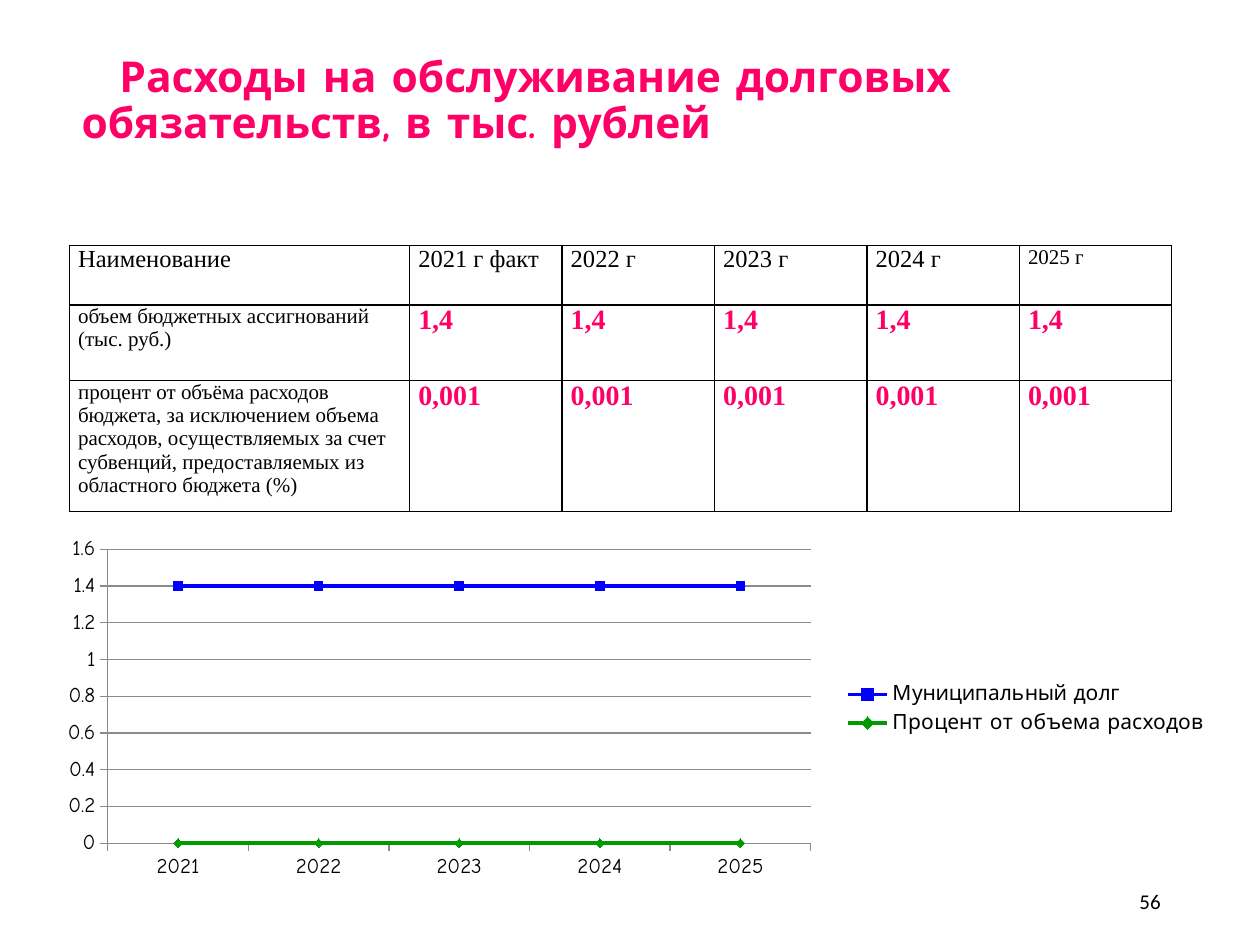
from dataclasses import dataclass

from lxml import etree
from pptx import Presentation
from pptx.chart.data import CategoryChartData
from pptx.dml.color import RGBColor
from pptx.enum.chart import XL_CHART_TYPE, XL_LEGEND_POSITION, XL_MARKER_STYLE, XL_TICK_MARK
from pptx.enum.text import MSO_ANCHOR, PP_ALIGN
from pptx.oxml import parse_xml
from pptx.oxml.ns import nsdecls, qn
from pptx.util import Emu, Inches, Pt

BLACK = RGBColor(0x00, 0x00, 0x00)
PINK = RGBColor(0xFF, 0x00, 0x66)
BLUE = RGBColor(0x00, 0x00, 0xFF)
GREEN = RGBColor(0x00, 0x99, 0x00)
GRAY = RGBColor(0x8B, 0x8B, 0x8B)

LINE_MARKERS = XL_CHART_TYPE.LINE_MARKERS
LEGEND_RIGHT = XL_LEGEND_POSITION.RIGHT
SQUARE, DIAMOND = XL_MARKER_STYLE.SQUARE, XL_MARKER_STYLE.DIAMOND
TICK_OUTSIDE = XL_TICK_MARK.OUTSIDE
MIDDLE, RIGHT = MSO_ANCHOR.MIDDLE, PP_ALIGN.RIGHT

HEADING_FONT, TABLE_FONT, NUMBER_FONT = "Comic Neue", "Times New Roman", "Calibri"

LEFT, CONTENT_WIDTH = 0.55, 8.75
NAME_WIDTH = 2.7
ROW_HEIGHTS = (0.47, 0.6, 1.04)
YEARS = ("2021", "2022", "2023", "2024", "2025")


@dataclass
class TextStyle:
    font: str
    size: float
    color: RGBColor = BLACK
    bold: bool = False


@dataclass
class DebtSeries:
    name: str
    value: float
    color: RGBColor
    marker: XL_MARKER_STYLE


HEADER = TextStyle(TABLE_FONT, 14)
SMALL = TextStyle(TABLE_FONT, 12)
FIGURE = TextStyle(TABLE_FONT, 16, PINK, True)
AXIS = TextStyle(HEADING_FONT, 12)

SERIES = (
    DebtSeries("Муниципальный долг", 1.4, BLUE, SQUARE),
    DebtSeries("Процент от объема расходов", 0, GREEN, DIAMOND),
)
INDICATORS = (
    ("объем бюджетных ассигнований (тыс. руб.)", "1,4"),
    ("процент от объёма расходов бюджета, за исключением объема расходов, "
     "осуществляемых за счет субвенций, предоставляемых из областного бюджета (%)", "0,001"),
)


def apply_style(font, style: TextStyle) -> None:
    font.name, font.size, font.bold = style.font, Pt(style.size), style.bold
    font.color.rgb = style.color


def add_text(slide, box: tuple, text: str, style: TextStyle):
    shape = slide.shapes.add_textbox(*map(Inches, box))
    frame = shape.text_frame
    frame.word_wrap = True
    frame.vertical_anchor = MIDDLE
    paragraph = frame.paragraphs[0]
    paragraph.text = text
    apply_style(paragraph.font, style)
    return frame


def add_borders(cell) -> None:
    properties = cell._tc.get_or_add_tcPr()
    for position, side in enumerate(("lnL", "lnR", "lnT", "lnB")):
        properties.insert(position, parse_xml(
            f'<a:{side} {nsdecls("a")} w="{Pt(1)}"><a:solidFill>'
            f'<a:srgbClr val="{BLACK}"/></a:solidFill></a:{side}>'))


def fill_cell(cell, text: str, style: TextStyle) -> None:
    cell.margin_left = cell.margin_right = Inches(0.07)
    cell.margin_top = cell.margin_bottom = 0
    cell.fill.background()
    add_borders(cell)
    paragraph = cell.text_frame.paragraphs[0]
    paragraph.text = text
    apply_style(paragraph.font, style)


def add_debt_table(slide) -> None:
    columns = len(YEARS) + 1
    table = slide.shapes.add_table(
        len(ROW_HEIGHTS), columns, Inches(LEFT), Inches(1.95),
        Inches(CONTENT_WIDTH), Inches(sum(ROW_HEIGHTS))).table
    table.first_row = table.horz_banding = False
    year_width = (CONTENT_WIDTH - NAME_WIDTH) / len(YEARS)
    for index, column in enumerate(table.columns):
        column.width = Inches(year_width if index else NAME_WIDTH)
    for row, height in zip(table.rows, ROW_HEIGHTS):
        row.height = Inches(height)

    # The first year is actual, and the last heading is set smaller
    headings = ["Наименование", "2021 г факт"] + [f"{year} г" for year in YEARS[1:]]
    for index, heading in enumerate(headings):
        fill_cell(table.cell(0, index), heading, SMALL if index == columns - 1 else HEADER)
    for row, (name, figure) in enumerate(INDICATORS, start=1):
        fill_cell(table.cell(row, 0), name, SMALL)
        for column in range(1, columns):
            fill_cell(table.cell(row, column), figure, FIGURE)


def place_plot(chart, **shares: float) -> None:
    """Fix the inner plot area at shares of the chart's size."""
    plot_area = chart._chartSpace.chart.plotArea
    for old_layout in plot_area.findall(qn("c:layout")):
        plot_area.remove(old_layout)
    layout = etree.Element(qn("c:layout"))
    manual = etree.SubElement(layout, qn("c:manualLayout"))
    settings = {"layoutTarget": "inner", "xMode": "edge", "yMode": "edge", **shares}
    for tag, value in settings.items():
        etree.SubElement(manual, qn(f"c:{tag}")).set("val", str(value))
    plot_area.insert(0, layout)


def add_debt_chart(slide) -> None:
    data = CategoryChartData()
    data.categories = YEARS
    for item in SERIES:
        data.add_series(item.name, [item.value] * len(YEARS))
    chart = slide.shapes.add_chart(
        LINE_MARKERS, Inches(0.39), Inches(4.22), Inches(9.3), Inches(2.81), data).chart
    chart.has_title = False
    apply_style(chart.font, AXIS)
    place_plot(chart, x=0.05, y=0.05, w=0.6, h=0.83)

    for series, item in zip(chart.plots[0].series, SERIES):
        series.smooth = False
        series.format.line.color.rgb = item.color
        series.format.line.width = Pt(2)
        series.marker.style, series.marker.size = item.marker, 5
        series.marker.format.fill.solid()
        series.marker.format.fill.fore_color.rgb = item.color
        series.marker.format.line.color.rgb = item.color

    values = chart.value_axis
    values.minimum_scale, values.maximum_scale, values.major_unit = 0, 1.6, 0.2
    values.has_major_gridlines = True
    values.major_gridlines.format.line.color.rgb = GRAY
    for axis in (chart.category_axis, values):
        axis.major_tick_mark = TICK_OUTSIDE
        axis.format.line.color.rgb = GRAY
        apply_style(axis.tick_labels.font, AXIS)

    chart.has_legend = True
    chart.legend.position = LEGEND_RIGHT
    chart.legend.include_in_layout = False
    apply_style(chart.legend.font, AXIS)


def main() -> None:
    presentation = Presentation()
    presentation.slide_width, presentation.slide_height = Inches(10), Inches(7.5)
    slide = presentation.slides.add_slide(presentation.slide_layouts[6])

    # Title with an indented first line, raised within its box
    title = add_text(slide, (LEFT, 0.5, 8.13, 0.92),
                     "Расходы на обслуживание долговых обязательств, в тыс. рублей",
                     TextStyle(HEADING_FONT, 24.3, PINK, True))
    title.margin_top, title.margin_bottom = Emu(0), Inches(0.3)
    title.paragraphs[0].line_spacing = 0.9
    title.paragraphs[0]._p.get_or_add_pPr().set("indent", str(Inches(0.3)))

    add_debt_table(slide)
    add_debt_chart(slide)

    # Page number
    number = add_text(slide, (7.06, 6.95, 2.25, 0.4), "56", TextStyle(NUMBER_FONT, 12))
    number.paragraphs[0].alignment = RIGHT

    presentation.save("out.pptx")


if __name__ == "__main__":
    main()
